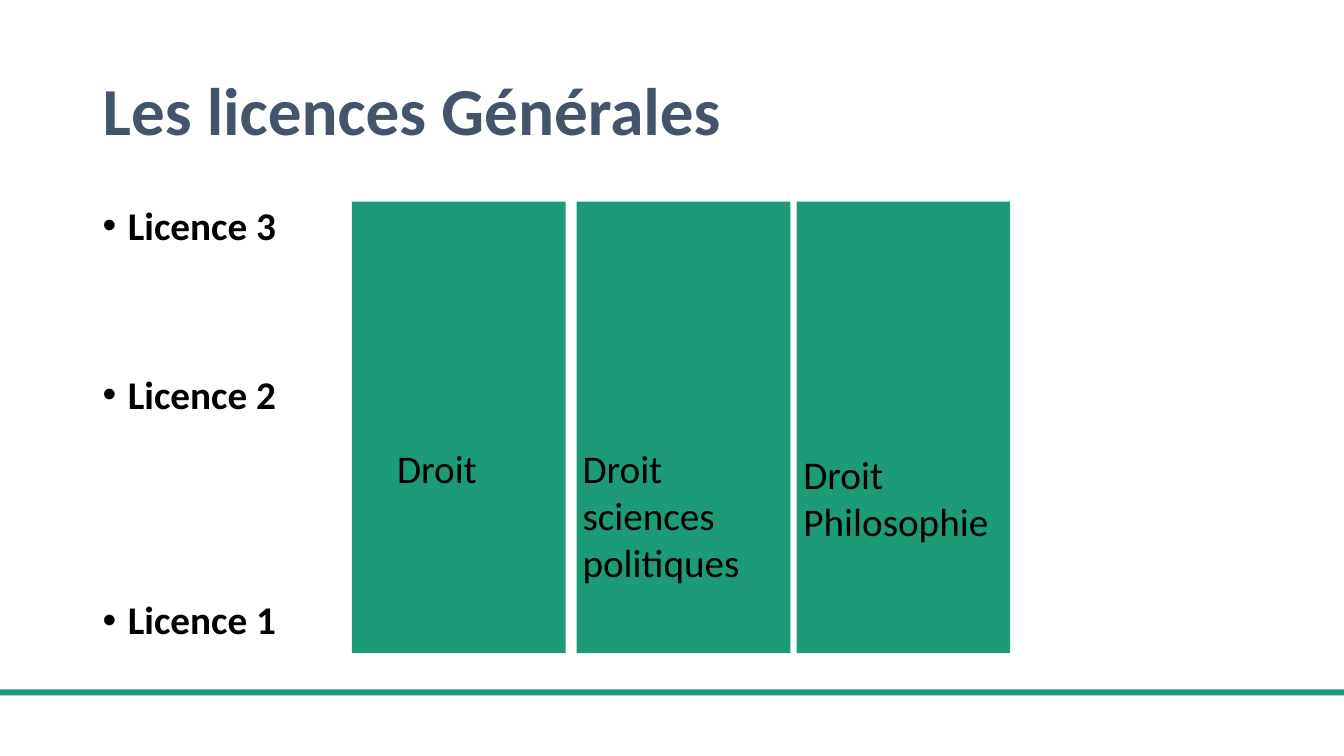
from dataclasses import dataclass

from lxml.etree import SubElement
from pptx import Presentation
from pptx.dml.color import RGBColor
from pptx.enum.shapes import MSO_SHAPE
from pptx.enum.text import MSO_ANCHOR
from pptx.oxml.ns import qn
from pptx.util import Inches, Pt


@dataclass(frozen=True)
class Theme:
    font: str = "Calibri"
    green: RGBColor = RGBColor(0x1D, 0x9A, 0x78)
    slate: RGBColor = RGBColor(0x44, 0x54, 0x6A)
    black: RGBColor = RGBColor(0, 0, 0)
    head: Pt = Pt(48)
    text: Pt = Pt(28)


THEME = Theme()


def apply(item, values):
    for name, value in values.items():
        setattr(item, name, value)


def draw_bar(slide, box):
    bar = slide.shapes.add_shape(MSO_SHAPE.RECTANGLE, *map(Inches, box))
    bar.shadow.inherit = False
    bar.fill.solid()
    bar.fill.fore_color.rgb = THEME.green
    bar.line.fill.background()


def draw_text(slide, box, lines, size, color, bold=False, **frame):
    text = slide.shapes.add_textbox(*map(Inches, box)).text_frame
    apply(text, {"word_wrap": True, **frame})
    for index, line in enumerate(lines):
        para = text.paragraphs[0] if index == 0 else text.add_paragraph()
        run = para.add_run()
        run.text = line
        apply(run.font, {"name": THEME.font, "size": size, "bold": bold})
        run.font.color.rgb = color
    return text


def draw_title(slide, box):
    text = draw_text(slide, box, ["Les licences Générales"], THEME.head,
                     THEME.slate, True, vertical_anchor=MSO_ANCHOR.MIDDLE)
    text.paragraphs[0].line_spacing = 0.9


def draw_years(slide, box):
    years = {"Licence 3": 10, "Licence 2": 90.5, "Licence 1": 130.5}
    text = draw_text(slide, box, years, THEME.text, THEME.black, True)
    for para, gap in zip(text.paragraphs, years.values()):
        apply(para, {"line_spacing": 0.9, "space_before": Pt(gap)})
        props = para._p.get_or_add_pPr()
        props.set("marL", str(Inches(0.25)))
        props.set("indent", str(Inches(-0.25)))
        SubElement(props, qn("a:buFont")).set("typeface", "Arial")
        SubElement(props, qn("a:buChar")).set("char", "•")


def draw_tracks(slide, box):
    left, top, width, height = box
    tracks = [
        (0, "Droit", (0.35, 2.36, 1.14, 0.57)),
        (2.23, "Droit sciences politiques", (-0.04, 2.36, 1.87, 1.51)),
        (4.41, "Droit Philosophie", (-0.03, 2.42, 2.12, 1.04)),
    ]
    for shift, label, (dx, dy, wide, high) in tracks:
        x = left + shift
        draw_bar(slide, (x, top, width, height))
        draw_text(slide, (x + dx, top + dy, wide, high), [label],
                  THEME.text, THEME.black)


def main():
    deck = Presentation()
    apply(deck, {"slide_width": Inches(13.33), "slide_height": Inches(7.5)})
    slide = deck.slides.add_slide(deck.slide_layouts[6])
    draw_bar(slide, (0, 6.84, 13.33, 0.06))
    draw_title(slide, (0.92, 0.4, 11.5, 1.45))
    draw_tracks(slide, (3.49, 2, 2.12, 4.48))
    draw_years(slide, (0.92, 2, 11.44, 4.48))
    deck.save("out.pptx")


if __name__ == "__main__":
    main()
